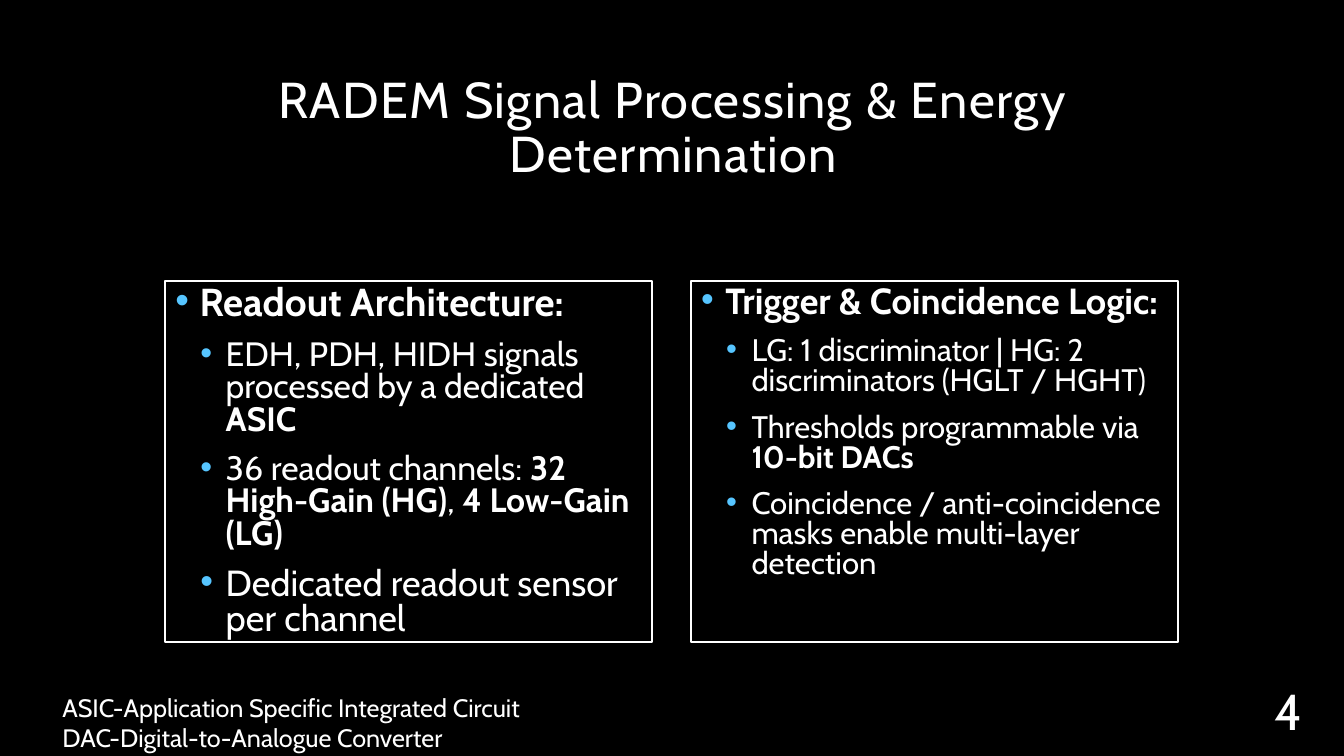
"""Build the RADEM signal processing slide."""
from lxml import etree
from pptx import Presentation
from pptx.dml.color import RGBColor
from pptx.enum.shapes import MSO_SHAPE
from pptx.enum.text import MSO_ANCHOR, MSO_AUTO_SIZE, PP_ALIGN
from pptx.oxml.ns import qn
from pptx.util import Cm, Pt

BLACK = RGBColor(0x00, 0x00, 0x00)
WHITE = RGBColor(0xFF, 0xFF, 0xFF)
BULLET_BLUE = RGBColor(0x56, 0xC5, 0xFF)
FONT = "Cabin"
TITLE_ONLY = 5
RECTANGLE = MSO_SHAPE.RECTANGLE
TOP, MIDDLE, BOTTOM = MSO_ANCHOR.TOP, MSO_ANCHOR.MIDDLE, MSO_ANCHOR.BOTTOM
LEFT, CENTER, RIGHT = PP_ALIGN.LEFT, PP_ALIGN.CENTER, PP_ALIGN.RIGHT
NO_FIT = MSO_AUTO_SIZE.NONE

PANEL_LEFT, PANEL_STEP = 4.17, 13.25
PANELS = [
    ("Readout Architecture:", 27.8, [
        (24.1, [("EDH, PDH, HIDH signals processed by a dedicated ", False),
                ("ASIC", True)]),
        (24.1, [("36 readout channels: ", False), ("32 High-Gain (HG)", True),
                (", ", False), ("4 Low-Gain (LG)", True)]),
        (25.9, [("Dedicated readout sensor per channel", False)]),
    ]),
    ("Trigger & Coincidence Logic:", 25.9, [
        (22.2, [("LG: 1 discriminator | HG: 2 discriminators (HGLT / HGHT)", False)]),
        (22.2, [("Thresholds programmable via ", False), ("10-bit DACs", True)]),
        (22.2, [("Coincidence / anti-coincidence masks enable multi-layer detection",
                 False)]),
    ]),
]
ABBREVIATIONS = ["ASIC-Application Specific Integrated Circuit",
                 "DAC-Digital-to-Analogue Converter"]


def add_span(para, text, size, bold=False):
    """Add one white run to a paragraph and return it."""
    span = para.add_run()
    span.text = text
    span.font.name = FONT
    span.font.size = Pt(size)
    span.font.bold = bold
    span.font.color.rgb = WHITE
    return span


def prepare_frame(box, anchor):
    """Make the text of a box wrap at a fixed size and return its frame."""
    frame = box.text_frame
    frame.word_wrap = True
    frame.auto_size = NO_FIT
    frame.vertical_anchor = anchor
    return frame


def add_bullet(para, margin, hanging):
    """Give a paragraph a blue bullet with a hanging indent."""
    properties = para._p.get_or_add_pPr()
    properties.set("marL", str(Cm(margin)))
    properties.set("indent", str(-Cm(hanging)))
    color = etree.SubElement(properties, qn("a:buClr"))
    etree.SubElement(color, qn("a:srgbClr"), val=str(BULLET_BLUE))
    etree.SubElement(properties, qn("a:buFont"), typeface="Arial")
    etree.SubElement(properties, qn("a:buChar"), char="•")


def format_title(page):
    """Place and fill the title placeholder."""
    title = page.shapes.title
    title.left, title.top, title.width, title.height = Cm(4.27), Cm(0.94), Cm(25.4), Cm(3.81)
    para = prepare_frame(title, BOTTOM).paragraphs[0]
    para.alignment = CENTER
    para.line_spacing = 0.9
    span = add_span(para, "RADEM Signal Processing & Energy Determination", 36)
    span.font._element.set("spc", "100")


def add_panel(page, left, heading, heading_size, items):
    """Add an outlined panel with a bold heading and bulleted items."""
    panel = page.shapes.add_shape(RECTANGLE, Cm(left), Cm(7.09), Cm(12.27), Cm(9.09))
    panel.shadow.inherit = False
    panel.fill.background()
    panel.line.color.rgb = WHITE
    panel.line.width = Pt(1.5)
    frame = prepare_frame(panel, TOP)
    para = frame.paragraphs[0]
    para.alignment = LEFT
    para.line_spacing = 0.8
    add_bullet(para, 0.61, 0.61)
    add_span(para, heading, heading_size, True)
    for size, spans in items:
        para = frame.add_paragraph()
        para.level = 1
        para.alignment = LEFT
        para.line_spacing = 0.8
        para.space_before = Pt(12)
        add_bullet(para, 1.27, 0.64)
        for text, bold in spans:
            add_span(para, text, size, bold)


def add_text(page, place, lines, size, alignment, anchor):
    """Add a text box with one paragraph per line."""
    box = page.shapes.add_textbox(*(Cm(length) for length in place))
    frame = prepare_frame(box, anchor)
    for index, line in enumerate(lines):
        para = frame.add_paragraph() if index else frame.paragraphs[0]
        para.alignment = alignment
        add_span(para, line, size)


def main():
    """Build and save the deck."""
    deck = Presentation()
    deck.slide_width, deck.slide_height = Cm(33.87), Cm(19.05)
    page = deck.slides.add_slide(deck.slide_layouts[TITLE_ONLY])
    page.background.fill.solid()
    page.background.fill.fore_color.rgb = BLACK
    format_title(page)
    for index, (heading, size, items) in enumerate(PANELS):
        add_panel(page, PANEL_LEFT + index * PANEL_STEP, heading, size, items)
    add_text(page, (1.32, 17.32, 16.94, 1.8), ABBREVIATIONS, 18, LEFT, TOP)
    add_text(page, (30.73, 17.53, 2.34, 0.76), ["4"], 36, RIGHT, MIDDLE)
    deck.save("out.pptx")


if __name__ == "__main__":
    main()
